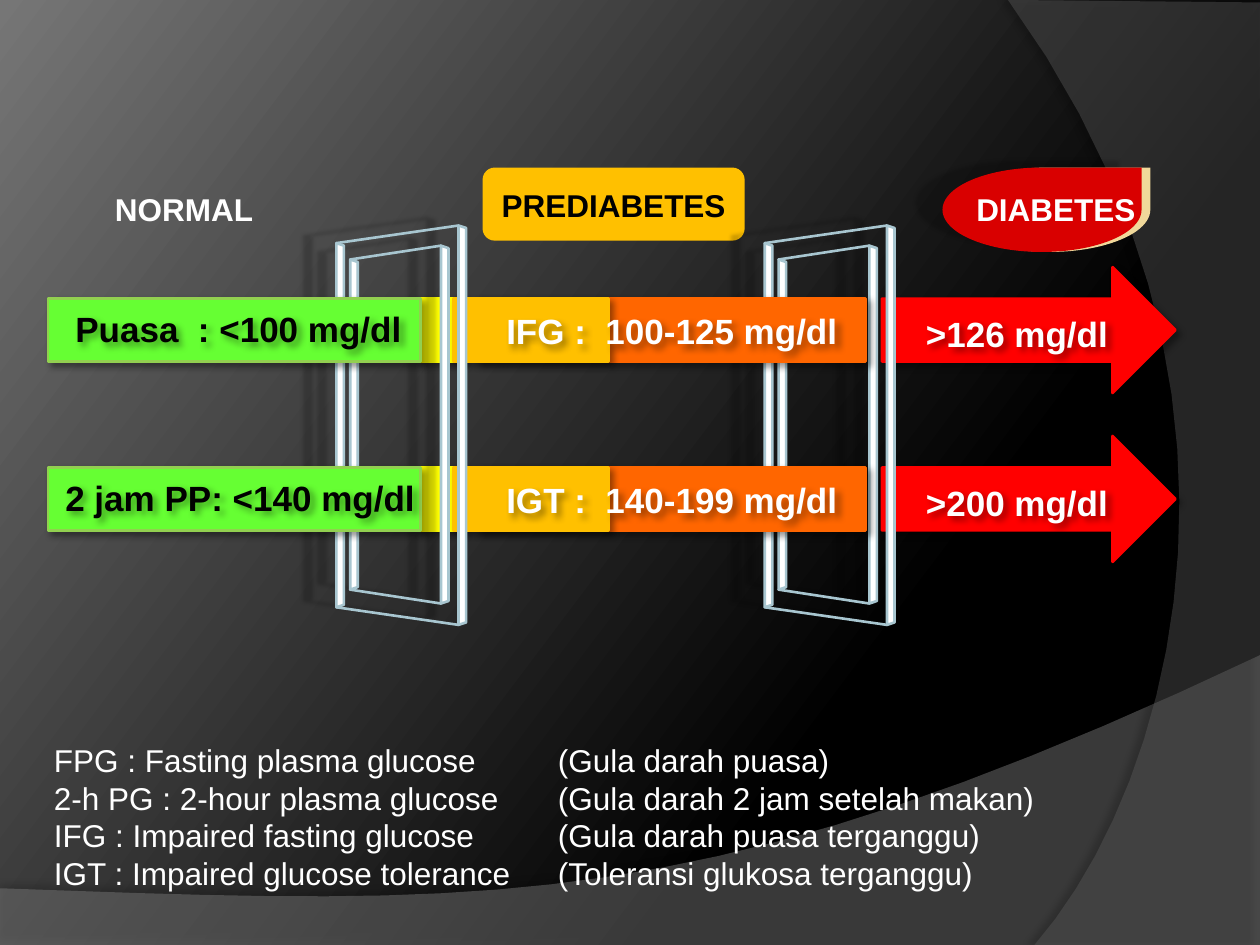
from dataclasses import dataclass

from lxml.etree import SubElement as Sub
from pptx import Presentation
from pptx.dml.color import RGBColor as RGB
from pptx.enum.shapes import MSO_SHAPE as Kind
from pptx.enum.text import PP_ALIGN as Align
from pptx.oxml.ns import qn
from pptx.util import Inches, Pt


@dataclass(frozen=True)
class Theme:
    """Colours, type sizes and shadows (opacity, blur, distance, angle)."""
    font: str = "Arial"
    small: int = 18
    large: int = 20
    black: str = "000000"
    white: str = "FFFFFF"
    grey: str = "767676"
    wave: str = "7F7F7F"
    curve: str = "5E5E5E"
    green: str = "66FF33"
    lime: str = "92D050"
    yellow: str = "FFFF00"
    amber: str = "FFC000"
    orange: str = "FF6600"
    red: str = "FF0000"
    dark_red: str = "D90000"
    cream: str = "F0D89A"
    steel: str = "A8C6D0"
    soft: tuple = (40, 4, 3, 45)
    deep: tuple = (18, 2, 19, 192)


T = Theme()


def shade(shape, style):
    """Give a shape an outer shadow, or none."""
    props = shape._element.spPr
    for old in props.findall(qn("a:effectLst")):
        props.remove(old)
    group = Sub(props, qn("a:effectLst"))
    if style:
        alpha, blur, dist, angle = style
        cast = Sub(group, qn("a:outerShdw"), blurRad=str(Pt(blur)),
                   dist=str(Pt(dist)), dir=str(angle * 60000), rotWithShape="0")
        tint = Sub(cast, qn("a:srgbClr"), val=T.black)
        Sub(tint, qn("a:alpha"), val=str(alpha * 1000))


def paint(shape, fill, line=None, style=None, alpha=None):
    """Set the fill, outline, shadow and opacity of a shape."""
    shape.fill.solid()
    shape.fill.fore_color.rgb = RGB.from_string(fill)
    if alpha:
        tint = shape._element.spPr.find(qn("a:solidFill"))[0]
        Sub(tint, qn("a:alpha"), val=str(alpha * 1000))
    if line:
        shape.line.color.rgb = RGB.from_string(line)
        shape.line.width = Pt(1.5)
    else:
        shape.line.fill.background()
    shade(shape, style)


def block(slide, kind, box, fill, line=None, style=None):
    """Add a painted preset shape."""
    shape = slide.shapes.add_shape(kind, *map(Inches, box))
    paint(shape, fill, line, style)


def outline(slide, parts, fill, line=None, style=None, alpha=None):
    """Add one painted shape made of closed polygons."""
    loops = [[(Inches(x), Inches(y)) for x, y in part] for part in parts]
    pen = slide.shapes.build_freeform(*loops[0][0])
    for start, *rest in loops:
        pen.move_to(*start)
        pen.add_line_segments(rest, close=True)
    paint(pen.convert_to_shape(), fill, line, style, alpha)


def label(slide, box, lines, size, color, bold=True, align=Align.LEFT,
          style=None, tab=None):
    """Add a text box with one paragraph per line."""
    shape = slide.shapes.add_textbox(*map(Inches, box))
    frame = shape.text_frame
    frame.word_wrap = True
    frame.text = "\n".join(lines)
    for para in frame.paragraphs:
        para.alignment = align
        if tab:
            stops = Sub(para._p.get_or_add_pPr(), qn("a:tabLst"))
            Sub(stops, qn("a:tab"), pos=str(Inches(tab)), algn="l")
        para.font.name = T.font
        para.font.size = Pt(size)
        para.font.bold = bold
        para.font.color.rgb = RGB.from_string(color)
    if style:
        shade(shape, style)


def bend(a, b, c, d, steps=20):
    """Return points along a cubic curve."""
    def mix(t, p, q, r, s):
        u = 1 - t
        return u**3 * p + 3 * u * u * t * q + 3 * u * t * t * r + t**3 * s
    return [tuple(mix(i / steps, *axis) for axis in zip(a, b, c, d))
            for i in range(steps + 1)]


def backdrop(slide, wide, high):
    """Draw the gradient and the two curved panels."""
    fill = slide.background.fill
    fill.gradient()
    fill.gradient_angle = 143
    for stop, place, color in zip(fill.gradient_stops, (0.3, 1), (T.black, T.grey)):
        stop.position = place
        stop.color.rgb = RGB.from_string(color)
    crest = bend((wide, 5.2), (5.59, 7.29), (3.91, 7.19), (0, 7.05))
    outline(slide, [[(0, high), (wide, high), *crest]], T.wave,
            style=(35, 4, 3.5, 270), alpha=45)
    side = bend((8.21, high), (9.35, 6.19), (10.18, 3), (8, 0))
    outline(slide, [[(wide, 0.02), (wide, high), *side]], T.curve,
            style=(45, 4, 4, 180), alpha=40)


def header(slide, x, y):
    """Draw the three stage titles."""
    block(slide, Kind.ROUNDED_RECTANGLE, (x + 3.33, y, 2.08, 0.58), T.amber)
    block(slide, Kind.TEAR, (x + 7.03, y, 1.6, 0.67), T.cream, style=T.deep)
    block(slide, Kind.TEAR, (x + 6.98, y, 1.58, 0.67), T.dark_red)
    for text, dx, dy, wide, color in (("NORMAL", 0, 0.13, 1.92, T.white),
                                      ("PREDIABETES", 3.33, 0.1, 2.08, T.black),
                                      ("DIABETES", 6.92, 0.13, 1.92, T.white)):
        label(slide, (x + dx, y + dy, wide, 0.42), [text], T.small, color,
              align=Align.CENTER)


def gate(slide, x, y):
    """Draw an open door frame seen at an angle."""
    parts = []
    for left, right, top, low, rise in ((0.13, 1.1, 0.05, 2.94, 0.14),
                                        (0.24, 0.96, 0.18, 2.8, 0.11)):
        for level, lift in ((top, -rise), (low, rise)):
            parts.append([(x + left, y + level), (x + right, y + level + lift)])
        for start, grow in ((left, 0), (right, rise)):
            near, far = x + start, x + start + 0.06
            head, foot = y + top - grow, y + low + grow
            parts.append([(near, head), (far, head + 0.02),
                          (far, foot - 0.02), (near, foot)])
    outline(slide, parts, T.white, T.steel, T.deep)


def arrow(slide, x, y):
    """Draw the red diabetes arrow of a row."""
    block(slide, Kind.RIGHT_ARROW, (x, y - 0.25, 2.33, 1), T.red, T.red, T.soft)


def band(slide, x, y):
    """Draw the yellow to orange prediabetes bar of a row."""
    for dx, wide, color in ((0, 0.33, T.yellow), (0.46, 3.08, T.orange),
                            (0.27, 1.23, T.amber)):
        block(slide, Kind.RECTANGLE, (x + dx, y, wide, 0.5), color, color, T.soft)


def values(slide, x, y, normal, shift, middle, high):
    """Draw the green bar and the three values of a row."""
    block(slide, Kind.RECTANGLE, (x, y, 2.96, 0.5), T.green, T.lime, T.soft)
    for text, dx, dy, wide, color in ((normal, shift, 0.02, 3.2, T.black),
                                      (middle, 3.54, 0.04, 3.33, T.white),
                                      (high, 6.87, 0.06, 2, T.white)):
        label(slide, (x + dx, y + dy, wide, 0.44), [text], T.large, color,
              style=T.soft)


def legend(slide, x, y):
    """Write the list of terms."""
    label(slide, (x, y, 8.42, 1.62), [
        "FPG : Fasting plasma glucose \t(Gula darah puasa)",
        "2-h PG : 2-hour plasma glucose \t(Gula darah 2 jam setelah makan)",
        "IFG : Impaired fasting glucose \t(Gula darah puasa terganggu)",
        "IGT : Impaired glucose tolerance \t(Toleransi glukosa terganggu)",
    ], T.small, T.white, bold=False, tab=4)


def main():
    """Build and save the slide."""
    deck = Presentation()
    deck.slide_width, deck.slide_height = Inches(10), Inches(7.5)
    slide = deck.slides.add_slide(deck.slide_layouts[6])
    rows = {2.37: ("Puasa  : <100 mg/dl", 0.12, "IFG :  100-125 mg/dl", ">126 mg/dl"),
            3.71: ("2 jam PP: <140 mg/dl", 0.04, "IGT :  140-199 mg/dl", ">200 mg/dl")}
    backdrop(slide, 10, 7.5)
    header(slide, 0.5, 1.33)
    for y in rows:
        arrow(slide, 7, y)
    gate(slide, 5.94, 1.88)
    for y in rows:
        band(slide, 3.33, y)
    gate(slide, 2.54, 1.88)
    for y, texts in rows.items():
        values(slide, 0.38, y, *texts)
    legend(slide, 0.33, 5.83)
    deck.save("out.pptx")


if __name__ == "__main__":
    main()
